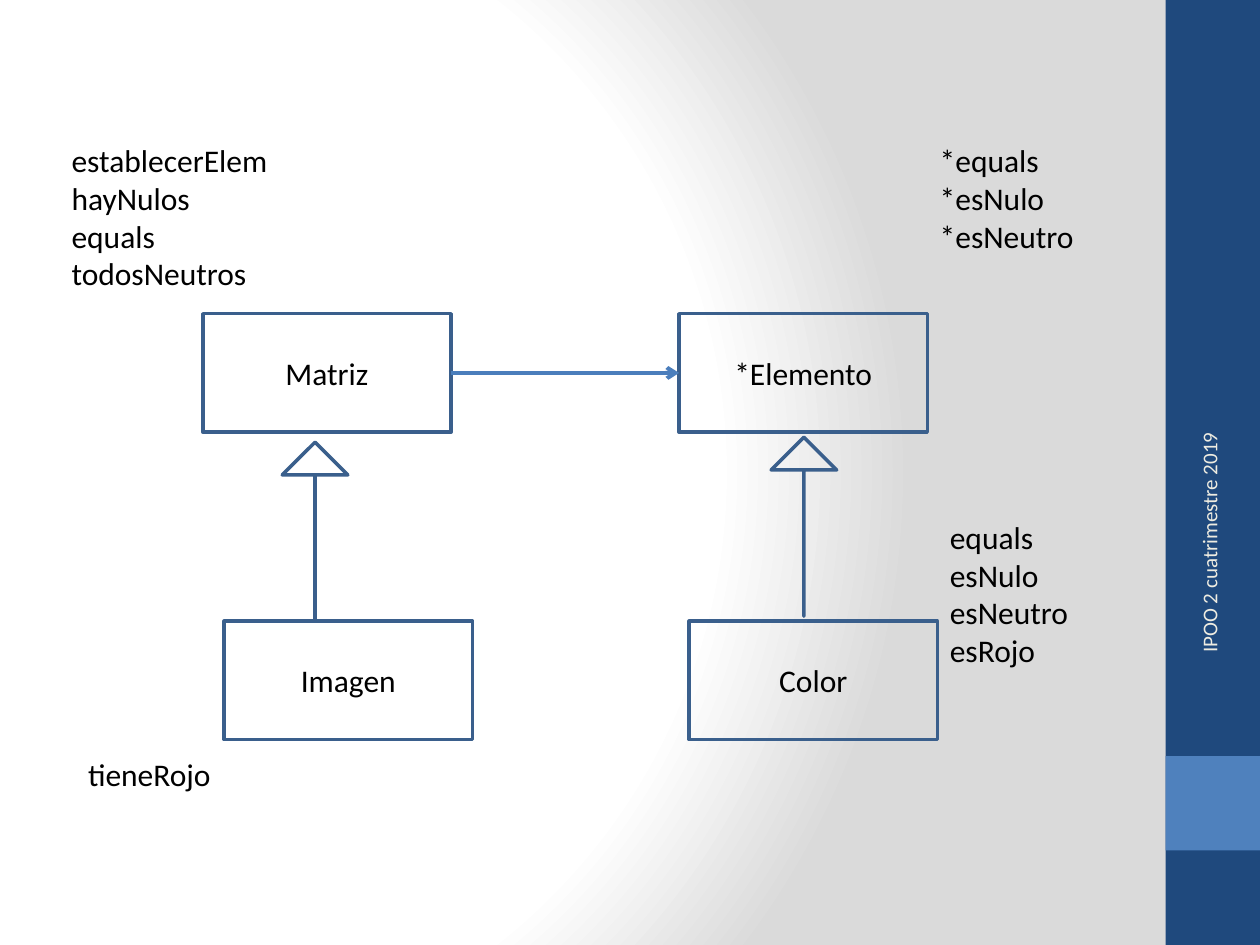
from dataclasses import dataclass

import lxml.etree
import pptx
import pptx.dml.color
import pptx.enum.shapes
import pptx.enum.text
import pptx.oxml
import pptx.oxml.ns
import pptx.util

Inches = pptx.util.Inches
Pt = pptx.util.Pt
qn = pptx.oxml.ns.qn
Kind = pptx.enum.shapes.MSO_SHAPE
Align = pptx.enum.text.PP_ALIGN
Anchor = pptx.enum.text.MSO_ANCHOR


@dataclass(frozen=True)
class Theme:
    font: str = "Calibri"
    body: int = 18
    small: int = 12
    ink: str = "000000"
    pale: str = "EEECE1"
    navy: str = "1F497D"
    blue: str = "4F81BD"
    edge: str = "3A5F8C"
    link: str = "4B7EBC"
    stops: tuple = ((0, "FFFFFF"), (75, "FFFFFF"), (100, "DADADA"))


THEME = Theme()
CLASS_SIZE = (1.97, 0.94)
ARROW_SIZE = (0.52, 1.42)


def color(code):
    return pptx.dml.color.RGBColor.from_string(code)


def paint_back(slide):
    """Fill the background with a radial gradient."""
    slide.background.fill.gradient()
    grad = slide.element.find(".//" + qn("a:gradFill"))
    for child in list(grad):
        grad.remove(child)
    stops = lxml.etree.SubElement(grad, qn("a:gsLst"))
    for place, code in THEME.stops:
        stop = lxml.etree.SubElement(stops, qn("a:gs"), pos=str(place * 1000))
        lxml.etree.SubElement(stop, qn("a:srgbClr"), val=code)
    circle = lxml.etree.SubElement(grad, qn("a:path"))
    circle.set("path", "circle")
    lxml.etree.SubElement(circle, qn("a:fillToRect"),
                          l="20000", t="50000", r="100000", b="50000")


def write(frame, lines, align=Align.LEFT, size=THEME.body, ink=THEME.ink):
    for i, line in enumerate(lines):
        para = frame.paragraphs[0] if i == 0 else frame.add_paragraph()
        para.alignment = align
        run = para.add_run()
        run.text = line
        run.font.name = THEME.font
        run.font.size = Pt(size)
        run.font.color.rgb = color(ink)


def add_shape(slide, kind, left, top, width, height):
    shape = slide.shapes.add_shape(
        kind, Inches(left), Inches(top), Inches(width), Inches(height))
    shape.shadow.inherit = False
    return shape


def add_band(slide, top, height, fill):
    band = add_shape(slide, Kind.RECTANGLE, 9.25, top, 0.75, height)
    band.fill.solid()
    band.fill.fore_color.rgb = color(fill)
    band.line.fill.background()


def outline(shape):
    shape.fill.background()
    shape.line.color.rgb = color(THEME.edge)
    shape.line.width = Pt(2)


def add_class(slide, name, left, top):
    box = add_shape(slide, Kind.RECTANGLE, left, top, *CLASS_SIZE)
    outline(box)
    box.text_frame.vertical_anchor = Anchor.MIDDLE
    write(box.text_frame, [name], Align.CENTER)
    return box


def add_parent(slide, left, top):
    """Draw an inheritance arrow: a hollow head on a thin stem."""
    arrow = add_shape(slide, Kind.UP_ARROW, left, top, *ARROW_SIZE)
    arrow.adjustments[0] = 0
    arrow.adjustments[1] = 0.5
    outline(arrow)


def add_link(slide, start, end):
    """Join the right side of start to the left side of end."""
    link = slide.shapes.add_connector(
        pptx.enum.shapes.MSO_CONNECTOR.STRAIGHT, 0, 0, 0, 0)
    link.begin_connect(start, 3)
    link.end_connect(end, 1)
    link.line.color.rgb = color(THEME.link)
    link.line.width = Pt(2.25)
    line = link.line._get_or_add_ln()
    lxml.etree.SubElement(line, qn("a:tailEnd"), type="arrow")
    props = link.element.find(qn("p:spPr"))
    lxml.etree.SubElement(props, qn("a:effectLst"))


def add_box(slide, left, top, width, height):
    return slide.shapes.add_textbox(
        Inches(left), Inches(top), Inches(width), Inches(height))


def add_list(slide, lines, left, top, width, height):
    frame = add_box(slide, left, top, width, height).text_frame
    frame.word_wrap = False
    frame.auto_size = pptx.enum.text.MSO_AUTO_SIZE.SHAPE_TO_FIT_TEXT
    write(frame, lines)


def add_foot(slide, text):
    foot = add_box(slide, 8.3, 4.43, 2.59, 0.4)
    foot.rotation = 270
    foot.text_frame.word_wrap = True
    foot.text_frame.vertical_anchor = Anchor.MIDDLE
    write(foot.text_frame, [text], Align.RIGHT, THEME.small, THEME.pale)


def main():
    deck = pptx.Presentation()
    deck.slide_width, deck.slide_height = Inches(10), Inches(7.5)
    slide = deck.slides.add_slide(deck.slide_layouts[6])

    paint_back(slide)
    add_band(slide, 0, 7.5, THEME.navy)
    add_band(slide, 6, 0.75, THEME.blue)
    add_foot(slide, "IPOO 2 cuatrimestre 2019")

    upper, lower = 2.49, 4.93
    matrix = add_class(slide, "Matriz", 1.61, upper)
    element = add_class(slide, "*Elemento", 5.39, upper)
    add_class(slide, "Color", 5.47, lower)
    add_class(slide, "Imagen", 1.78, lower)
    add_link(slide, matrix, element)
    add_parent(slide, 2.24, 3.51)
    add_parent(slide, 6.12, 3.47)

    add_list(slide, ["establecerElem", "hayNulos", "equals", "todosNeutros"],
             0.47, 1.07, 1.77, 1.31)
    add_list(slide, ["tieneRojo"], 0.6, 5.94, 1.19, 0.4)
    add_list(slide, ["*equals", "*esNulo", "*esNeutro"],
             7.36, 1.07, 1.28, 1.01)
    add_list(slide, ["equals", "esNulo", "esNeutro", "esRojo"],
             7.44, 4.06, 1.15, 1.31)

    deck.save("out.pptx")


if __name__ == "__main__":
    main()
